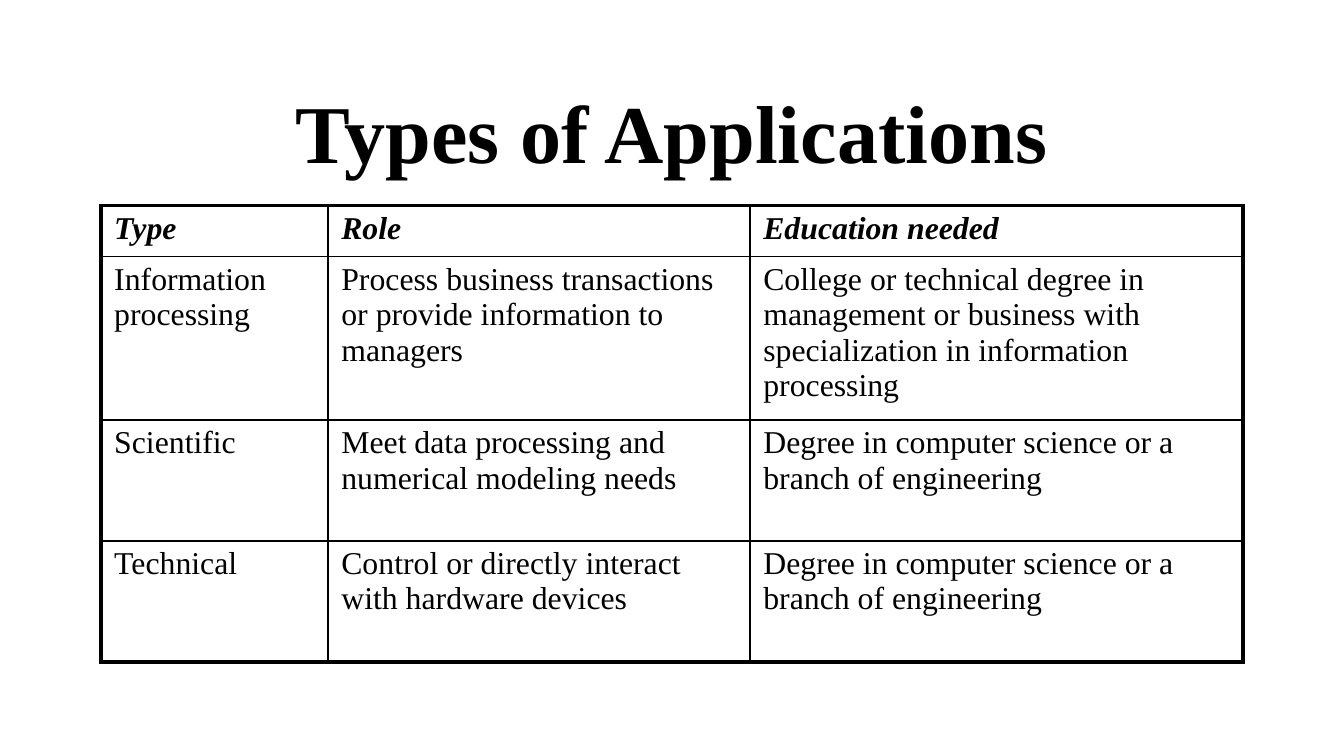
from lxml.etree import SubElement
from pptx import Presentation
from pptx.dml.color import RGBColor
from pptx.enum.text import MSO_ANCHOR, PP_ALIGN
from pptx.oxml.ns import qn
from pptx.util import Inches, Pt

BLACK = RGBColor(0x00, 0x00, 0x00)
THIN, THICK = Pt(1), Pt(2.25)

COLUMN_WIDTHS = [1.69, 3.14, 3.67]
ROW_HEIGHTS = [0.38, 1.18, 0.9, 0.9]
APPLICATIONS = [
    ["Type", "Role", "Education needed"],
    ["Information processing",
     "Process business transactions or provide information to managers",
     "College or technical degree in management or business with "
     "specialization in information processing"],
    ["Scientific",
     "Meet data processing and numerical modeling needs",
     "Degree in computer science or a branch of engineering"],
    ["Technical",
     "Control or directly interact with hardware devices",
     "Degree in computer science or a branch of engineering"],
]


class SlideBuilder:
    font = "Times New Roman"
    title_size = 44
    cell_size = 17

    def __init__(self, prs):
        self.s = prs.slides.add_slide(prs.slide_layouts[6])

    def run(self, p, text, size, bold=False, italic=False):
        r = p.add_run()
        r.text = text
        r.font.name = self.font
        r.font.size = Pt(size)
        r.font.bold = bold
        r.font.italic = italic
        r.font.color.rgb = BLACK

    def title(self, text, left, top, width, height):
        sp = self.s.shapes.add_textbox(
            Inches(left), Inches(top), Inches(width), Inches(height))
        tf = sp.text_frame
        tf.word_wrap = True
        tf.vertical_anchor = MSO_ANCHOR.MIDDLE
        p = tf.paragraphs[0]
        p.alignment = PP_ALIGN.CENTER
        self.run(p, text, self.title_size, bold=True)

    def border(self, cell, side, width):
        tc_pr = cell._tc.get_or_add_tcPr()
        ln = SubElement(tc_pr, qn(f"a:ln{side}"), w=str(int(width)))
        fill = SubElement(ln, qn("a:solidFill"))
        SubElement(fill, qn("a:srgbClr"), val=str(BLACK))

    def cell(self, cell, text, header):
        cell.margin_left = cell.margin_right = Inches(0.1)
        cell.margin_top = cell.margin_bottom = Inches(0.04)
        p = cell.text_frame.paragraphs[0]
        self.run(p, text, self.cell_size, bold=header, italic=header)

    def table(self, rows, left, top, widths, heights):
        frame = self.s.shapes.add_table(
            len(rows), len(widths), Inches(left), Inches(top),
            Inches(sum(widths)), Inches(sum(heights)))
        table = frame.table
        table.horz_banding = False
        for column, width in zip(table.columns, widths):
            column.width = Inches(width)
        for row, height in zip(table.rows, heights):
            row.height = Inches(height)

        last_row, last_col = len(rows) - 1, len(widths) - 1
        for i, texts in enumerate(rows):
            for j, text in enumerate(texts):
                cell = table.cell(i, j)
                self.cell(cell, text, header=i == 0)
                # Thick outer frame, thin inner grid
                outer = {"L": j == 0, "R": j == last_col,
                         "T": i == 0, "B": i == last_row}
                for side, is_outer in outer.items():
                    self.border(cell, side, THICK if is_outer else THIN)
                cell.fill.background()


def main():
    # Widescreen 16:9 page
    prs = Presentation()
    prs.slide_width = Inches(10)
    prs.slide_height = Inches(10 * 9 / 16)
    slide = SlideBuilder(prs)

    # Title
    slide.title("Types of Applications", 0.75, 0.5, 8.5, 0.94)

    # Application types
    slide.table(APPLICATIONS, 0.75, 1.53, COLUMN_WIDTHS, ROW_HEIGHTS)

    prs.save("out.pptx")


if __name__ == "__main__":
    main()
